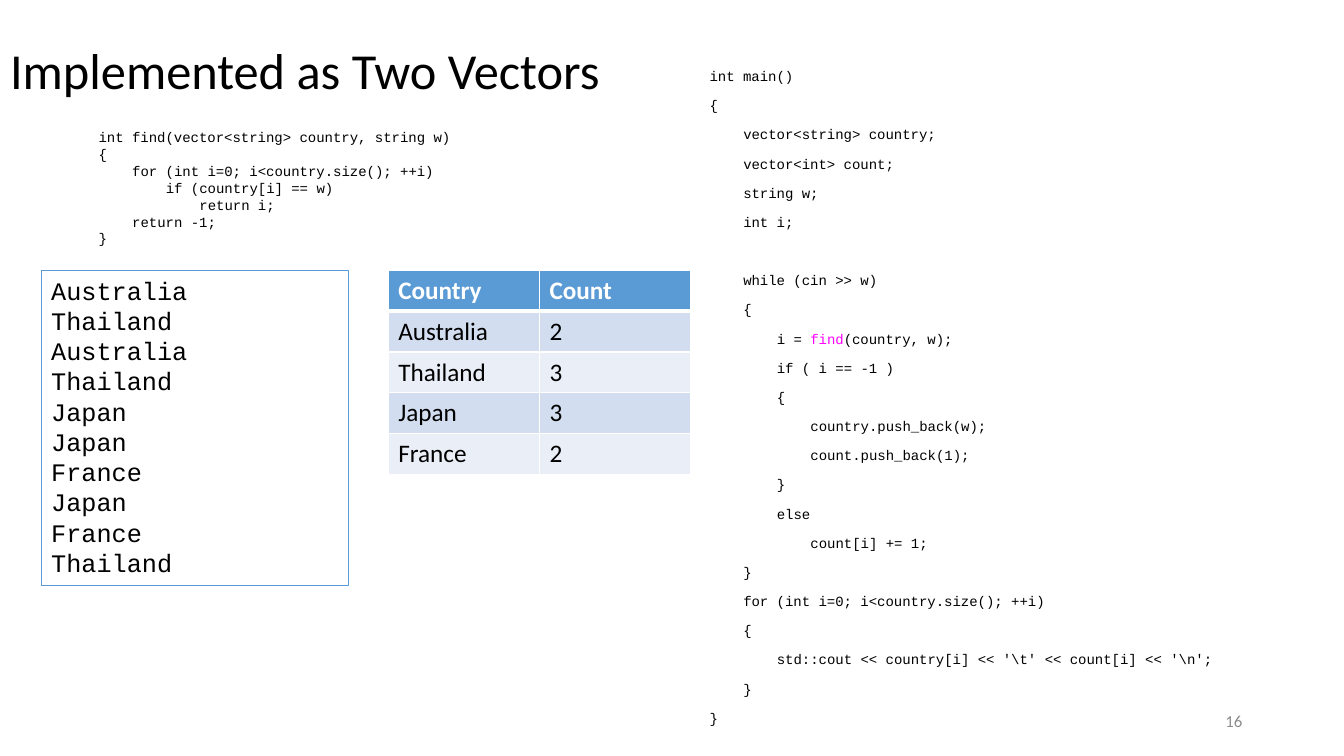
from dataclasses import dataclass

from lxml import etree
from pptx import Presentation
from pptx import util as u
from pptx.dml import color
from pptx.enum import shapes, text
from pptx.oxml import ns

SANS, MONO = "Calibri", "Courier New"
BLACK, WHITE, BLUE, PINK, GREY = "000000", "FFFFFF", "5B9BD5", "FF00FF", "8C8C8C"
BANDS = ("D2DEEF", "EAEFF7")

MAIN = r"""int main()
{
    vector<string> country;
    vector<int> count;
    string w;
    int i;

    while (cin >> w)
    {
        i = find(country, w);
        if ( i == -1 )
        {
            country.push_back(w);
            count.push_back(1);
        }
        else
            count[i] += 1;
    }
    for (int i=0; i<country.size(); ++i)
    {
        std::cout << country[i] << '\t' << count[i] << '\n';
    }
}"""

FIND = """int find(vector<string> country, string w)
{
    for (int i=0; i<country.size(); ++i)
        if (country[i] == w)
            return i;
    return -1;
}"""

INPUT = """Australia
Thailand
Australia
Thailand
Japan
Japan
France
Japan
France
Thailand"""

COUNTS = [("Country", "Count"), ("Australia", "2"), ("Thailand", "3"),
          ("Japan", "3"), ("France", "2")]


@dataclass
class Block:
    words: str
    left: float
    top: float
    width: float
    height: float
    size: float
    face: str = MONO
    ink: str = BLACK
    edge: str = ""
    mark: str = ""
    lead: float = 1.0
    gap: float = 0
    align: text.PP_ALIGN = text.PP_ALIGN.LEFT
    anchor: text.MSO_ANCHOR = text.MSO_ANCHOR.TOP


TITLE = Block("Implemented as Two Vectors", 0, 0, 6.37, 1.45, 36, SANS,
              lead=0.9, anchor=text.MSO_ANCHOR.MIDDLE)
BLOCKS = [
    Block(MAIN, 6.94, 0.64, 5.47, 6.12, 10, mark="find", lead=0.9, gap=10),
    Block("16", 9.42, 6.95, 3, 0.4, 12, SANS, GREY,
          align=text.PP_ALIGN.RIGHT, anchor=text.MSO_ANCHOR.MIDDLE),
    Block(FIND, 0.88, 1.23, 4.47, 1.28, 10),
    Block(INPUT, 0.41, 2.68, 3.05, 3.13, 18, edge=BLUE),
]


def paint(form, tone: str) -> None:
    if hasattr(form, "solid"):
        form.solid()
        form = form.fore_color
    form.rgb = color.RGBColor.from_string(tone)


def style(font, size: float, face: str, ink: str, bold: bool = False) -> None:
    font.size, font.name, font.bold = u.Pt(size), face, bold
    paint(font.color, ink)


def write(frame, block: Block) -> None:
    frame.word_wrap = True
    frame.auto_size = text.MSO_AUTO_SIZE.NONE
    frame.vertical_anchor = block.anchor
    par, skip = frame.paragraphs[0], 0
    for row, line in enumerate(block.words.split("\n")):
        if not line:
            skip += block.size * 1.2 * block.lead + block.gap
            continue
        if row:
            par = frame.add_paragraph()
        code = line.lstrip()
        depth = len(line) - len(code)
        if depth:
            inset = u.Inches(depth * block.size * 0.6 / 72)
            par._p.get_or_add_pPr().set("marL", str(inset))
        par.alignment = block.align
        par.line_spacing = block.lead
        par.space_before = u.Pt(block.gap + skip)
        skip = 0
        style(par.font, block.size, block.face, block.ink)
        parts = code.partition(block.mark) if block.mark else (code,)
        for part in filter(None, parts):
            run = par.add_run()
            run.text = part
            if part == block.mark:
                paint(run.font.color, PINK)


def place(shape, block: Block) -> None:
    shape.left, shape.top = u.Inches(block.left), u.Inches(block.top)
    shape.width, shape.height = u.Inches(block.width), u.Inches(block.height)
    write(shape.text_frame, block)


def draw(slide, block: Block) -> None:
    if block.edge:
        shape = slide.shapes.add_shape(shapes.MSO_SHAPE.RECTANGLE, 0, 0, 0, 0)
        shape.shadow.inherit = False
        shape.fill.background()
        paint(shape.line.fill, block.edge)
        shape.line.width = u.Pt(0.75)
    else:
        shape = slide.shapes.add_textbox(0, 0, 0, 0)
    place(shape, block)


def rule(cell, side: str, width: float) -> None:
    props = cell._tc.get_or_add_tcPr()
    line = etree.SubElement(props, ns.qn(f"a:ln{side}"), w=str(u.Pt(width)))
    fill = etree.SubElement(line, ns.qn("a:solidFill"))
    etree.SubElement(fill, ns.qn("a:srgbClr"), val=WHITE)


def chart(slide, rows: list[tuple[str, str]]) -> None:
    high = 0.406
    table = slide.shapes.add_table(
        len(rows), 2, u.Inches(3.85), u.Inches(2.68),
        u.Inches(3), u.Inches(high * len(rows))).table
    for r, row in enumerate(rows):
        table.rows[r].height = u.Inches(high)
        head = r == 0
        for c, word in enumerate(row):
            cell = table.cell(r, c)
            for side in "LRTB":
                thick = (r, side) in ((0, "B"), (1, "T"))
                rule(cell, side, 3 if thick else 1)
            paint(cell.fill, BLUE if head else BANDS[(r - 1) % 2])
            cell.text = word
            style(cell.text_frame.paragraphs[0].font, 18, SANS,
                  WHITE if head else BLACK, head)


def main() -> None:
    deck = Presentation()
    deck.slide_width, deck.slide_height = u.Inches(13.33), u.Inches(7.5)
    slide = deck.slides.add_slide(deck.slide_layouts[5])
    place(slide.shapes.title, TITLE)
    for block in BLOCKS:
        draw(slide, block)
    chart(slide, COUNTS)
    deck.save("out.pptx")


if __name__ == "__main__":
    main()
